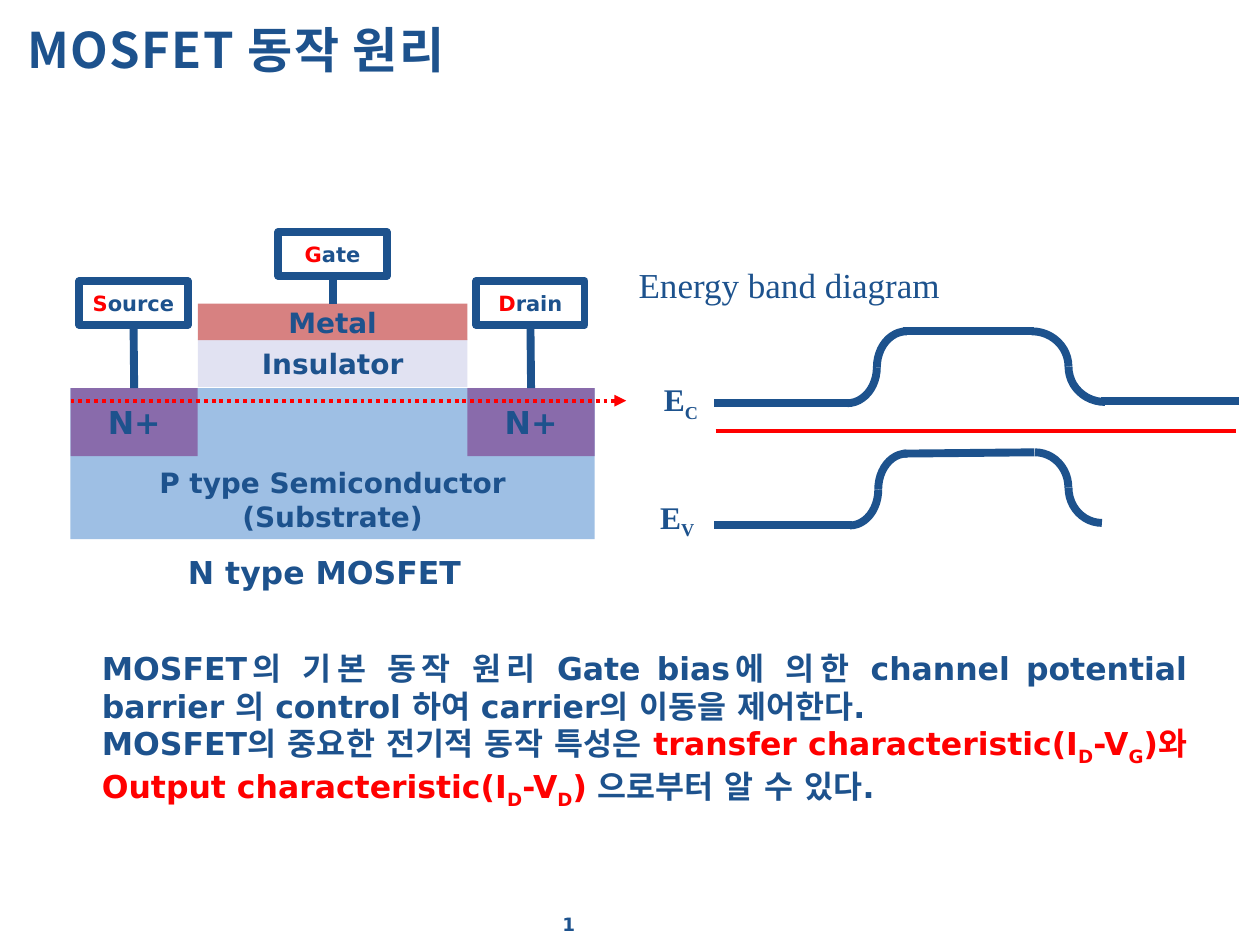
from dataclasses import dataclass
from typing import NamedTuple

from lxml.etree import SubElement
from pptx import Presentation
from pptx.dml.color import RGBColor as Rgb
from pptx.enum.dml import MSO_LINE_DASH_STYLE as Dash
from pptx.enum.shapes import MSO_CONNECTOR_TYPE as Link, MSO_SHAPE as Kind
from pptx.enum.text import MSO_ANCHOR as Anchor, PP_ALIGN as Align
from pptx.oxml.ns import qn
from pptx.util import Inches, Pt


@dataclass(frozen=True)
class Theme:
    navy: str = "1D528D"
    red: str = "FF0000"
    base: str = "9EBFE4"
    oxide: str = "E1E2F2"
    metal: str = "D78181"
    doped: str = "896BAB"
    sans: str = "DejaVu Sans"
    hangul: str = "Noto Sans CJK KR"
    serif: str = "Times New Roman"
    head: float = 28
    note: float = 20
    body: float = 18
    layer: float = 16
    pin: float = 12
    page: float = 10.5
    thick: float = 4.5
    thin: float = 2.25


T = Theme()


class Run(NamedTuple):
    text: str
    hue: str = T.navy
    sub: bool = False


class Box(NamedTuple):
    x: float
    y: float
    w: float
    h: float


class Block(NamedTuple):
    box: Box
    lines: list
    fill: str
    size: float = T.layer
    anchor: Anchor = Anchor.MIDDLE


class Note(NamedTuple):
    box: Box
    lines: list
    size: float = T.body
    face: str = T.sans
    bold: bool = True
    align: Align = Align.LEFT
    anchor: Anchor = Anchor.TOP


class Wire(NamedTuple):
    x1: float
    y1: float
    x2: float
    y2: float
    hue: str = T.navy
    width: float = T.thick


class Bend(NamedTuple):
    box: Box
    rise: bool


def place(box: Box) -> list:
    return [Inches(v) for v in box]


def write(frame, lines: list, size: float, face: str = T.sans, bold: bool = True,
          align: Align = Align.CENTER, anchor: Anchor = Anchor.MIDDLE) -> None:
    for name, value in {"word_wrap": True, "vertical_anchor": anchor}.items():
        setattr(frame, name, value)
    for i, line in enumerate(lines):
        para = frame.paragraphs[0] if i == 0 else frame.add_paragraph()
        para.alignment = align
        for part in line:
            run = para.add_run()
            run.text = part.text
            for name, value in {"name": face, "size": Pt(size), "bold": bold}.items():
                setattr(run.font, name, value)
            run.font.color.rgb = Rgb.from_string(part.hue)
            props = run.font._element
            SubElement(props, qn("a:ea"), typeface=face)
            if part.sub:
                props.set("baseline", "-25000")


def stroke(line, hue: str = T.navy, width: float = T.thick) -> None:
    line.color.rgb = Rgb.from_string(hue)
    line.width = Pt(width)


def add_block(slide, block: Block):
    shape = slide.shapes.add_shape(Kind.RECTANGLE, *place(block.box))
    shape.shadow.inherit = False
    shape.fill.solid()
    shape.fill.fore_color.rgb = Rgb.from_string(block.fill)
    shape.line.fill.background()
    write(shape.text_frame, block.lines, block.size, anchor=block.anchor)
    return shape


def add_pin(slide, x: float, y: float, name: str):
    shape = slide.shapes.add_shape(Kind.RECTANGLE, *place(Box(x, y, 0.86, 0.35)))
    shape.shadow.inherit = False
    shape.fill.background()
    stroke(shape.line)
    write(shape.text_frame, [[Run(name[0], T.red), Run(name[1:])]], T.pin)
    return shape


def add_note(slide, note: Note) -> None:
    text = slide.shapes.add_textbox(*place(note.box))
    write(text.text_frame, *note[1:])


def add_wire(slide, wire: Wire):
    ends = [Inches(v) for v in wire[:4]]
    line = slide.shapes.add_connector(Link.STRAIGHT, *ends)
    stroke(line.line, wire.hue, wire.width)
    SubElement(line._element.spPr, qn("a:effectLst"))
    return line


def add_lead(slide, pin, part) -> None:
    line = add_wire(slide, Wire(0, 0, 1, 1))
    line.begin_connect(part, 0)
    line.end_connect(pin, 2)


def add_bend(slide, bend: Bend) -> None:
    x, y, w, h = bend.box
    foot = x - w if bend.rise else x + w
    for left, turn in ((x, 0), (foot, 180)):
        arc = slide.shapes.add_shape(Kind.ARC, *place(Box(left, y, w, h)))
        arc.shadow.inherit = False
        arc.fill.background()
        stroke(arc.line)
        arc.rotation = turn
        if bend.rise:
            arc._element.spPr.xfrm.set("flipH", "1")


def add_title(slide, text: str) -> None:
    title = slide.shapes.title
    spots = zip(("left", "top", "width", "height"), place(Box(0.12, 0.05, 8.58, 0.67)))
    for name, value in spots:
        setattr(title, name, value)
    write(title.text_frame, [[Run(text)]], T.head, T.hangul, align=Align.LEFT)
    title.text_frame.paragraphs[0].runs[0].font._element.set("spc", "80")


BASE = Block(Box(0.56, 3.08, 4.16, 1.2),
             [[Run("P type Semiconductor")], [Run("(Substrate)")]],
             T.base, anchor=Anchor.BOTTOM)
OXIDE = Block(Box(1.57, 2.69, 2.14, 0.38), [[Run("Insulator")]], T.oxide)
METAL = Block(Box(1.57, 2.41, 2.14, 0.29), [[Run("Metal")]], T.metal)
WELLS = [Block(Box(x, 3.08, 1.01, 0.54), [[Run("N+")]], T.doped, T.body)
         for x in (0.56, 3.71)]
PINS = [(2.21, 1.84, "Gate"), (0.63, 2.23, "Source"), (3.78, 2.23, "Drain")]
WIRES = [Wire(5.67, 3.2, 6.76, 3.2), Wire(8.74, 3.18, 9.83, 3.18),
         Wire(7.17, 2.63, 8.21, 2.63), Wire(5.67, 4.17, 6.76, 4.17),
         Wire(7.17, 3.6, 8.21, 3.59), Wire(5.68, 3.42, 9.81, 3.42, T.red, T.thin)]
BENDS = [Bend(Box(6.96, 2.63, 0.47, 0.57), True), Bend(Box(6.97, 3.6, 0.45, 0.57), True),
         Bend(Box(7.9, 2.63, 0.58, 0.56), False), Bend(Box(7.95, 3.59, 0.53, 0.56), False)]
BODY = [
    [Run("MOSFET의 기본 동작 원리 Gate bias에 의한 channel potential barrier 의 "
         "control 하여 carrier의 이동을 제어한다.")],
    [Run("MOSFET의 중요한 전기적 동작 특성은 "),
     Run("transfer characteristic(I", T.red), Run("D", T.red, True),
     Run("-V", T.red), Run("G", T.red, True),
     Run(")와 Output characteristic(I", T.red), Run("D", T.red, True),
     Run("-V", T.red), Run("D", T.red, True), Run(") ", T.red),
     Run("으로부터 알 수 있다.")],
]
NOTES = [
    Note(Box(1.1, 4.34, 2.95, 0.39), [[Run("N type MOSFET")]],
         align=Align.CENTER, anchor=Anchor.MIDDLE),
    Note(Box(3.35, 7.2, 2.33, 0.33), [[Run("1")]], T.page, align=Align.CENTER),
    Note(Box(4.97, 2.04, 3.11, 0.4), [[Run("Energy band diagram")]],
         T.note, T.serif, False),
    *(Note(Box(x, y, 0.55, 0.54), [[Run("E"), Run(sub, sub=True)]], face=T.serif)
      for x, y, sub in ((5.17, 2.97, "C"), (5.14, 3.9, "V"))),
    Note(Box(0.71, 5.1, 8.81, 1.25), BODY, align=Align.JUSTIFY),
]


def main() -> None:
    deck = Presentation()
    deck.slide_width, deck.slide_height = Inches(10), Inches(7.5)
    slide = deck.slides.add_slide(deck.slide_layouts[5])
    add_title(slide, "MOSFET 동작 원리")
    _, _, metal, *wells = [add_block(slide, b) for b in (BASE, OXIDE, METAL, *WELLS)]
    for pin, part in zip(PINS, (metal, *wells)):
        add_lead(slide, add_pin(slide, *pin), part)
    path = add_wire(slide, Wire(0.56, 3.18, 4.97, 3.18, T.red, T.thin)).line
    path.dash_style = Dash.ROUND_DOT
    SubElement(path._ln, qn("a:tailEnd"), type="triangle")
    for draw, items in ((add_wire, WIRES), (add_bend, BENDS), (add_note, NOTES)):
        for item in items:
            draw(slide, item)
    deck.save("out.pptx")


if __name__ == "__main__":
    main()
